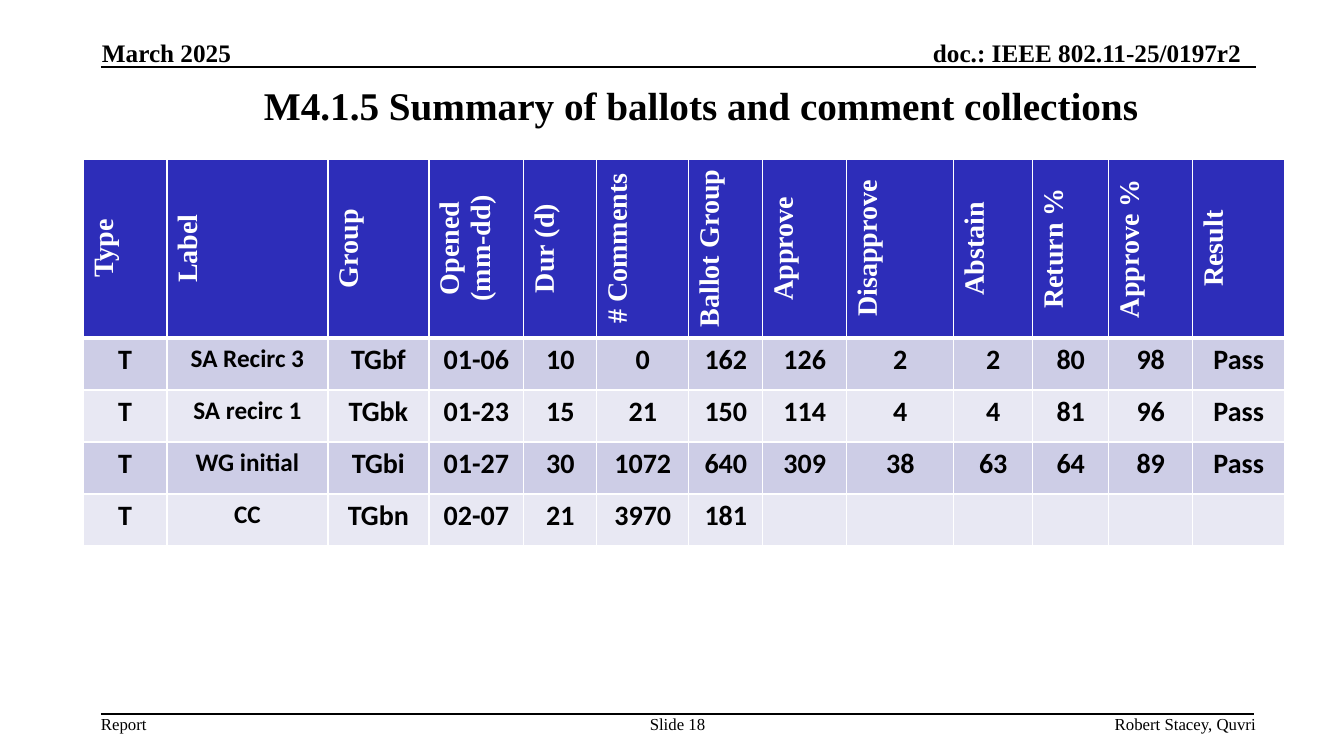
from lxml import etree
from pptx import Presentation
from pptx.dml.color import RGBColor
from pptx.enum.shapes import MSO_CONNECTOR
from pptx.enum.text import MSO_ANCHOR, MSO_AUTO_SIZE, PP_ALIGN
from pptx.oxml.ns import qn
from pptx.util import Emu, Pt

EMU_PER_PX = 914400 / 100.8
LEFT, CENTER, RIGHT = PP_ALIGN.LEFT, PP_ALIGN.CENTER, PP_ALIGN.RIGHT
TOP, MIDDLE, BOTTOM = MSO_ANCHOR.TOP, MSO_ANCHOR.MIDDLE, MSO_ANCHOR.BOTTOM
NO_AUTOFIT = MSO_AUTO_SIZE.NONE
STRAIGHT = MSO_CONNECTOR.STRAIGHT

THEME = {
    "serif": "Times New Roman", "sans": "Calibri",
    "ink": "000000", "paper": "FFFFFF", "header": "2D2DB9",
    "bands": ("CDCDE6", "E8E8F3"),
    "title": 28, "table": 20, "label": 18, "running head": 18, "footer": 12,
}


def px(value):
    return Emu(round(value * EMU_PER_PX))


def style(paragraph, align, size, bold, face=THEME["serif"], color=THEME["ink"]):
    paragraph.alignment = align
    font = paragraph.font
    font.name, font.size, font.bold = face, Pt(size), bold
    font.color.rgb = RGBColor.from_string(color)


prs = Presentation()
prs.slide_width, prs.slide_height = px(1344), px(756)
slide = prs.slides.add_slide(prs.slide_layouts[5])

# Title
title = slide.shapes.title
title.left, title.top, title.width, title.height = px(168), px(76), px(1066), px(58)
title.text_frame.text = "M4.1.5 Summary of ballots and comment collections"
title.text_frame.vertical_anchor = MIDDLE
title.text_frame.auto_size = NO_AUTOFIT
style(title.text_frame.paragraphs[0], CENTER, THEME["title"], True)

# Header and footer rules
for rule_y, rule_end in ((67, 1256), (714, 1254)):
    rule = slide.shapes.add_connector(STRAIGHT, px(101), px(rule_y), px(rule_end), px(rule_y))
    rule.line.color.rgb = RGBColor.from_string(THEME["ink"])
    rule.line.width = Pt(1)
    etree.SubElement(rule._element.spPr, qn("a:effectLst"))

# Header and footer texts: wording, left, width, alignment
HEADER = (("March 2025", 102, 170, LEFT),
          ("doc.: IEEE 802.11-25/0197r2", 866, 375, RIGHT))
FOOTER = (("Report", 101, 46, LEFT),
          ("Slide 18", 648, 59, CENTER),
          ("Robert Stacey, Quvri", 1017, 239, RIGHT))
for entries, top, height, anchor, size, bold in (
        (HEADER, 38, 30, BOTTOM, THEME["running head"], True),
        (FOOTER, 714, 20, TOP, THEME["footer"], False)):
    for wording, left, width, align in entries:
        frame = slide.shapes.add_textbox(px(left), px(top), px(width), px(height)).text_frame
        frame.margin_left = frame.margin_right = frame.margin_top = frame.margin_bottom = 0
        frame.word_wrap = False
        frame.vertical_anchor = anchor
        frame.text = wording
        style(frame.paragraphs[0], align, size, bold)

# Ballot table
COLUMNS = (("Type", 84), ("Label", 161), ("Group", 101), ("Opened\n(mm-dd)", 95),
           ("Dur (d)", 73), ("# Comments", 92), ("Ballot Group", 74), ("Approve", 84),
           ("Disapprove", 107), ("Abstain", 79), ("Return %", 76), ("Approve %", 84),
           ("Result", 92))
BALLOTS = (
    ("T", "SA Recirc 3", "TGbf", "01-06", "10", "0", "162", "126", "2", "2", "80", "98", "Pass"),
    ("T", "SA recirc 1", "TGbk", "01-23", "15", "21", "150", "114", "4", "4", "81", "96", "Pass"),
    ("T", "WG initial", "TGbi", "01-27", "30", "1072", "640", "309", "38", "63", "64", "89", "Pass"),
    ("T", "CC", "TGbn", "02-07", "21", "3970", "181", "", "", "", "", "", ""),
)
HEADER_HEIGHT, BALLOT_HEIGHT = 179, 52
LABEL_COLUMN = 1

rows = [[heading for heading, _ in COLUMNS], *BALLOTS]
ballot_table = slide.shapes.add_table(
    len(rows), len(COLUMNS), px(83), px(159), px(sum(width for _, width in COLUMNS)),
    px(HEADER_HEIGHT + BALLOT_HEIGHT * len(BALLOTS))).table
for column, (_, width) in zip(ballot_table.columns, COLUMNS):
    column.width = px(width)

for r, values in enumerate(rows):
    is_header = r == 0
    ballot_table.rows[r].height = px(HEADER_HEIGHT if is_header else BALLOT_HEIGHT)
    fill = THEME["header"] if is_header else THEME["bands"][(r - 1) % 2]
    face = THEME["serif"] if is_header else THEME["sans"]
    color = THEME["paper"] if is_header else THEME["ink"]
    borders = {"lnL": 1, "lnR": 1, "lnT": 3 if r == 1 else 1, "lnB": 3 if is_header else 1}
    for c, value in enumerate(values):
        cell = ballot_table.cell(r, c)
        properties = cell._tc.get_or_add_tcPr()
        for side, weight in borders.items():
            border = etree.SubElement(properties, qn(f"a:{side}"), w=str(Pt(weight)))
            border_fill = etree.SubElement(border, qn("a:solidFill"))
            etree.SubElement(border_fill, qn("a:srgbClr"), val=THEME["paper"])
        cell.fill.solid()
        cell.fill.fore_color.rgb = RGBColor.from_string(fill)
        if is_header:
            cell.vertical_anchor = MIDDLE
            properties.set("vert", "vert270")
        size = THEME["label"] if c == LABEL_COLUMN and not is_header else THEME["table"]
        cell.text_frame.text = value
        for paragraph in cell.text_frame.paragraphs:
            style(paragraph, CENTER, size, True, face, color)

prs.save("out.pptx")
